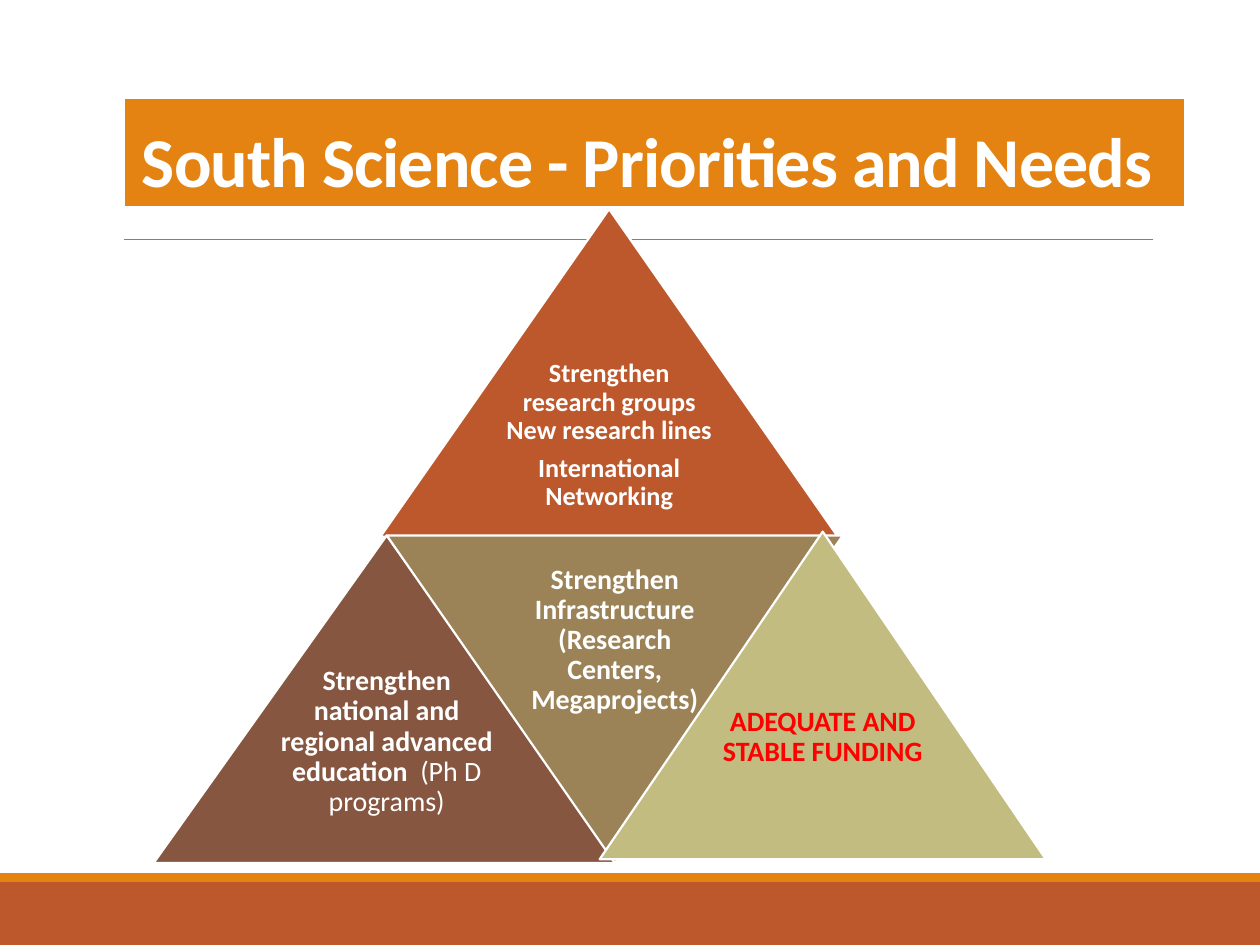
from lxml.etree import SubElement
from pptx import Presentation
from pptx.dml.color import RGBColor
from pptx.enum.shapes import MSO_CONNECTOR as Connector, MSO_SHAPE as Shape
from pptx.enum.text import MSO_ANCHOR as Anchor, PP_ALIGN as Align
from pptx.oxml.ns import qn
from pptx.util import Pt

FONT = "Calibri"
COLORS = {
    "white": "FFFFFF", "red": "FF0000", "gray": "808080", "orange": "E48312",
    "rust": "BD582C", "brown": "865640", "khaki": "9B8357", "olive": "C2BC80",
}
TRIANGLE_HEIGHT = 187.2
TEXT_HEIGHT = TRIANGLE_HEIGHT / 2


def color(name):
    return RGBColor.from_string(COLORS[name])


def add_block(page, kind, left, top, width, height, fill, line_width=0):
    block = page.shapes.add_shape(kind, Pt(left), Pt(top), Pt(width), Pt(height))
    block.shadow.inherit = False
    block.fill.solid()
    block.fill.fore_color.rgb = color(fill)
    if line_width:
        block.line.color.rgb = color("white")
        block.line.width = Pt(line_width)
    else:
        block.line.fill.background()
    return block


def add_rule(page, left, right, y):
    rule = page.shapes.add_connector(Connector.STRAIGHT, Pt(left), Pt(y), Pt(right), Pt(y))
    rule.line.color.rgb = color("gray")
    rule.line.width = Pt(0.5)
    SubElement(rule._element.spPr, qn("a:effectLst"))


def style_paragraph(para, size, font_color, spacing):
    para.alignment = Align.CENTER
    para.line_spacing = spacing
    para.font.name = FONT
    para.font.size = Pt(size)
    para.font.color.rgb = color(font_color)


def add_title(page, text):
    banner = add_block(page, Shape.RECTANGLE, 70.6, 55.4, 607, 63.4, "orange", 2)
    frame = banner.text_frame
    frame.word_wrap = True
    frame.vertical_anchor = Anchor.BOTTOM
    frame.margin_left, frame.margin_right = Pt(4), Pt(12.5)
    para = frame.paragraphs[0]
    span = para.add_run()
    span.text = text
    span._r.get_or_add_rPr().set("spc", "-50")
    style_paragraph(para, 40, "white", 0.85)
    para.font.bold = True


def add_triangle(page, left, top, width, fill, text_middle, paragraphs,
                 size=16, font_color="white", inset=5, rotation=0):
    """Triangle with a text box on its middle half; paragraphs hold (text, bold) spans."""
    triangle = add_block(page, Shape.ISOSCELES_TRIANGLE, left, top, width,
                         TRIANGLE_HEIGHT, fill, 1.25)
    triangle.rotation = rotation

    box = page.shapes.add_textbox(Pt(left + width / 4), Pt(text_middle - TEXT_HEIGHT / 2),
                                  Pt(width / 2), Pt(TEXT_HEIGHT))
    frame = box.text_frame
    frame.word_wrap = True
    frame.vertical_anchor = Anchor.MIDDLE
    frame.margin_left = frame.margin_right = Pt(inset)
    frame.margin_top = frame.margin_bottom = 0
    for index, spans in enumerate(paragraphs):
        para = frame.add_paragraph() if index else frame.paragraphs[0]
        for text, bold in spans:
            span = para.add_run()
            span.text = text
            span.font.bold = bold
        style_paragraph(para, size, font_color, 0.9)
        if index:
            para.space_before = Pt(0.35 * size)


def main():
    deck = Presentation()
    deck.slide_width, deck.slide_height = Pt(720), Pt(540)
    page = deck.slides.add_slide(deck.slide_layouts[6])

    # Footer bands and rule under the title
    add_block(page, Shape.RECTANGLE, 0, 504, 720, 36, "rust")
    add_block(page, Shape.RECTANGLE, 0, 499, 720, 5, "orange")
    add_rule(page, 70.6, 658.8, 136.8)

    add_title(page, "South Science - Priorities and Needs")

    # Pyramid of priorities
    add_triangle(page, 217.4, 119.5, 261.4, "rust", 249,
                 [[("Strengthen research groups New research lines", True)],
                  [("International Networking", True)]], size=15, inset=4.5)
    add_triangle(page, 87.8, 306, 266.4, "brown", 424,
                 [[("Strengthen national and regional advanced education ", True),
                   (" (Ph D programs)", False)]])
    add_triangle(page, 221, 306, 260.6, "khaki", 366,
                 [[("Strengthen Infrastructure (Research Centers, Megaprojects)", True)]],
                 rotation=180)
    add_triangle(page, 342.7, 303.8, 254.9, "olive", 421.5,
                 [[("ADEQUATE AND STABLE FUNDING", True)]], font_color="red")

    deck.save("out.pptx")


if __name__ == "__main__":
    main()
